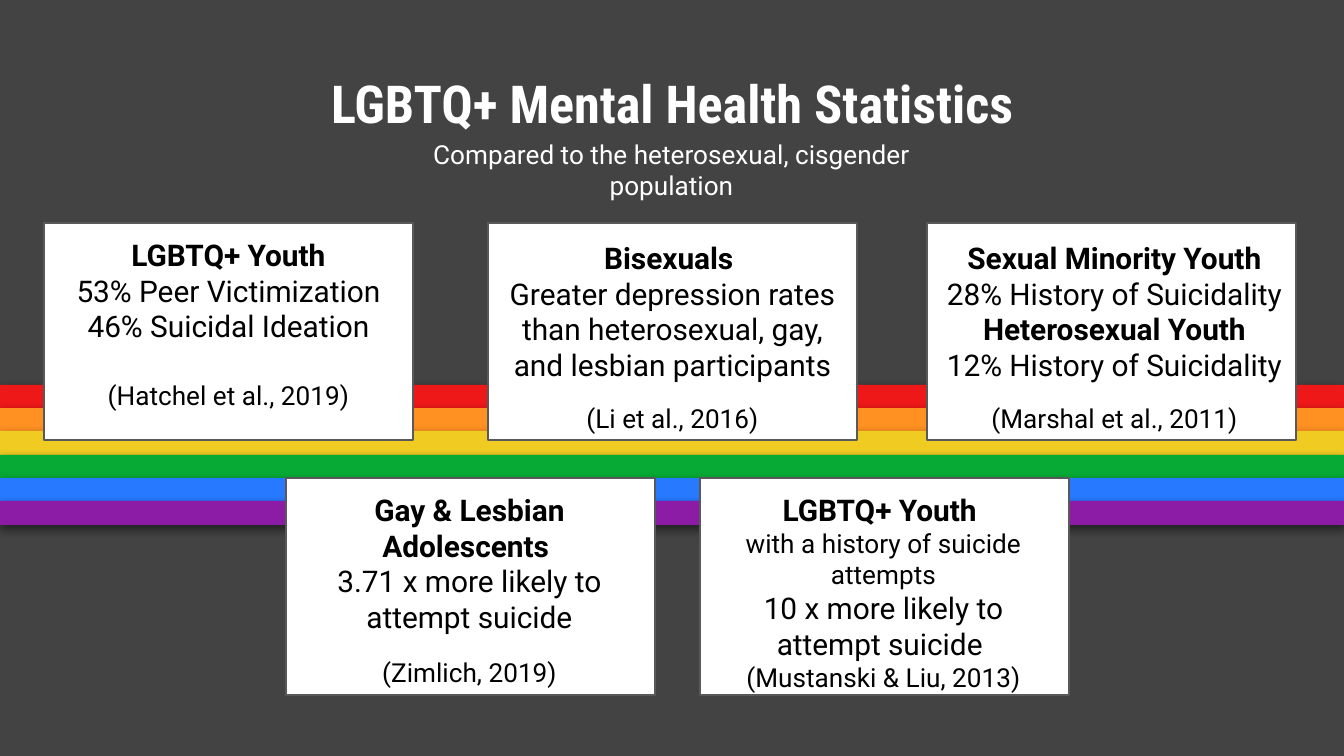
"""Build a slide of mental health statistics on white cards over rainbow bands."""
from dataclasses import dataclass

from lxml.etree import SubElement
from pptx import Presentation
from pptx.dml.color import RGBColor
from pptx.enum.shapes import MSO_SHAPE
from pptx.enum.text import MSO_ANCHOR, PP_ALIGN
from pptx.oxml.ns import qn
from pptx.util import Emu, Pt

SCALE = 9144000 / 1344
SLIDE_SIZE = (1344, 756)


@dataclass(frozen=True)
class Theme:
    """Hold the colours, fonts and type sizes of the slide."""
    background: str = "434343"
    light: str = "FFFFFF"
    dark: str = "000000"
    border: str = "595959"
    bands: tuple = ("EF1818", "FF9022", "F0CC22", "07AA35", "277AFF", "8C1CA6")
    heading_font: str = "Roboto Condensed"
    body_font: str = "Roboto"
    title_size: int = 28
    body_size: int = 16
    small_size: int = 14


THEME = Theme()
STYLES = {
    "title": {"name": THEME.heading_font, "size": Pt(THEME.title_size), "bold": True},
    "head": {"name": THEME.body_font, "size": Pt(THEME.body_size), "bold": True},
    "body": {"name": THEME.body_font, "size": Pt(THEME.body_size), "bold": False},
    "small": {"name": THEME.body_font, "size": Pt(THEME.small_size), "bold": False},
}

TITLE = [("title", "LGBTQ+ Mental Health Statistics", 0)]
SUBTITLE = [("small", "Compared to the heterosexual, cisgender population", 0)]
TITLE_BOX = (67, 60, 1210, 85)
SUBTITLE_BOX = (355, 125, 633, 59)

CARD_SIZE = (369, 217)
BANDS_TOP, BANDS_HEIGHT = 385, 140
CARDS = [
    {"at": (44, 223), "shift": (0, 0), "lines": [
        ("head", "LGBTQ+ Youth", 0),
        ("body", "53% Peer Victimization", 0),
        ("body", "46% Suicidal Ideation", 0),
        ("small", "(Hatchel et al., 2019)", 36)]},
    {"at": (488, 223), "shift": (0, 3), "lines": [
        ("head", "Bisexuals ", 0),
        ("body", "Greater depression rates than heterosexual, gay, "
                 "and lesbian participants", 0),
        ("small", "(Li et al., 2016)", 20)]},
    {"at": (927, 223), "shift": (3, 3), "lines": [
        ("head", "Sexual Minority Youth", 0),
        ("body", "28% History of Suicidality", 0),
        ("head", "Heterosexual Youth", 0),
        ("body", "12% History of Suicidality", 0),
        ("small", "(Marshal et al., 2011)", 20)]},
    {"at": (286, 478), "shift": (-1, 0), "lines": [
        ("head", "Gay & Lesbian Adolescents ", 0),
        ("body", "3.71 x more likely to attempt suicide", 0),
        ("small", "(Zimlich, 2019)", 22)]},
    {"at": (700, 478), "shift": (-1, 0), "lines": [
        ("head", "LGBTQ+ Youth ", 0),
        ("small", "with a history of suicide attempts", 0),
        ("body", "10 x more likely to attempt suicide ", 0),
        ("small", "(Mustanski & Liu, 2013)", 0)]},
]


def px(*lengths):
    """Turn pixel lengths into EMU."""
    return [Emu(round(length * SCALE)) for length in lengths]


def set_values(target, values):
    """Set each named attribute of the target."""
    for name, value in values.items():
        setattr(target, name, value)


def add_shadow(properties, blur, distance):
    """Add a soft black shadow that falls straight down."""
    effects = SubElement(properties, qn("a:effectLst"))
    shadow = SubElement(effects, qn("a:outerShdw"), blurRad=str(Pt(blur)),
                        dist=str(Pt(distance)), dir="5400000", algn="bl", rotWithShape="0")
    color = SubElement(shadow, qn("a:srgbClr"), val=THEME.dark)
    SubElement(color, qn("a:alpha"), val="50000")


def add_rectangle(shapes, bounds, fill, border=None):
    """Add a flat rectangle with an optional thin border."""
    box = shapes.add_shape(MSO_SHAPE.RECTANGLE, *px(*bounds))
    box.fill.solid()
    box.fill.fore_color.rgb = RGBColor.from_string(fill)
    if border:
        box.line.color.rgb = RGBColor.from_string(border)
        box.line.width = Pt(0.75)
    else:
        box.line.fill.background()
    return box


def write_lines(box, lines, color, anchor=MSO_ANCHOR.TOP):
    """Write centred lines given as style, text and gap above."""
    frame = box.text_frame
    inset = Emu(91440)
    set_values(frame, {"word_wrap": True, "vertical_anchor": anchor,
                       "margin_left": inset, "margin_right": inset,
                       "margin_top": inset, "margin_bottom": inset})
    for index, (style, text, gap) in enumerate(lines):
        para = frame.add_paragraph() if index else frame.paragraphs[0]
        set_values(para, {"alignment": PP_ALIGN.CENTER, "space_before": px(gap)[0],
                          "space_after": Pt(0), "line_spacing": 1.0})
        span = para.add_run()
        span.text = text
        set_values(span.font, STYLES[style])
        span.font.color.rgb = RGBColor.from_string(color)


def add_bands(page):
    """Stack the rainbow bands across the whole page."""
    group = page.shapes.add_group_shape()
    count = len(THEME.bands)
    edges = [BANDS_TOP + BANDS_HEIGHT * step // count for step in range(count + 1)]
    for color, top, bottom in zip(THEME.bands, edges, edges[1:]):
        band = add_rectangle(group.shapes, (0, top, SLIDE_SIZE[0], bottom - top), color)
        add_shadow(band._element.spPr, 4.5, 1.5)


def add_title(page):
    """Place the title and the line below it."""
    title = page.shapes.title
    set_values(title, dict(zip(("left", "top", "width", "height"), px(*TITLE_BOX))))
    write_lines(title, TITLE, THEME.light, MSO_ANCHOR.MIDDLE)
    span = title.text_frame.paragraphs[0].runs[0]
    properties = span.font._element
    add_shadow(properties, 4.5, 1.5)
    properties.insert(1, properties[-1])
    subtitle = page.shapes.add_textbox(*px(*SUBTITLE_BOX))
    write_lines(subtitle, SUBTITLE, THEME.light)


def add_cards(page):
    """Place the white cards, then their text."""
    for card in CARDS:
        box = add_rectangle(page.shapes, card["at"] + CARD_SIZE, THEME.light, THEME.border)
        box.shadow.inherit = False
    for card in CARDS:
        left, top = (start + shift for start, shift in zip(card["at"], card["shift"]))
        box = page.shapes.add_textbox(*px(left, top, *CARD_SIZE))
        write_lines(box, card["lines"], THEME.dark)


def main():
    """Build and save the deck."""
    deck = Presentation()
    deck.slide_width, deck.slide_height = px(*SLIDE_SIZE)
    page = deck.slides.add_slide(deck.slide_layouts[5])
    page.background.fill.solid()
    page.background.fill.fore_color.rgb = RGBColor.from_string(THEME.background)
    add_bands(page)
    add_cards(page)
    add_title(page)
    deck.save("out.pptx")


if __name__ == "__main__":
    main()
